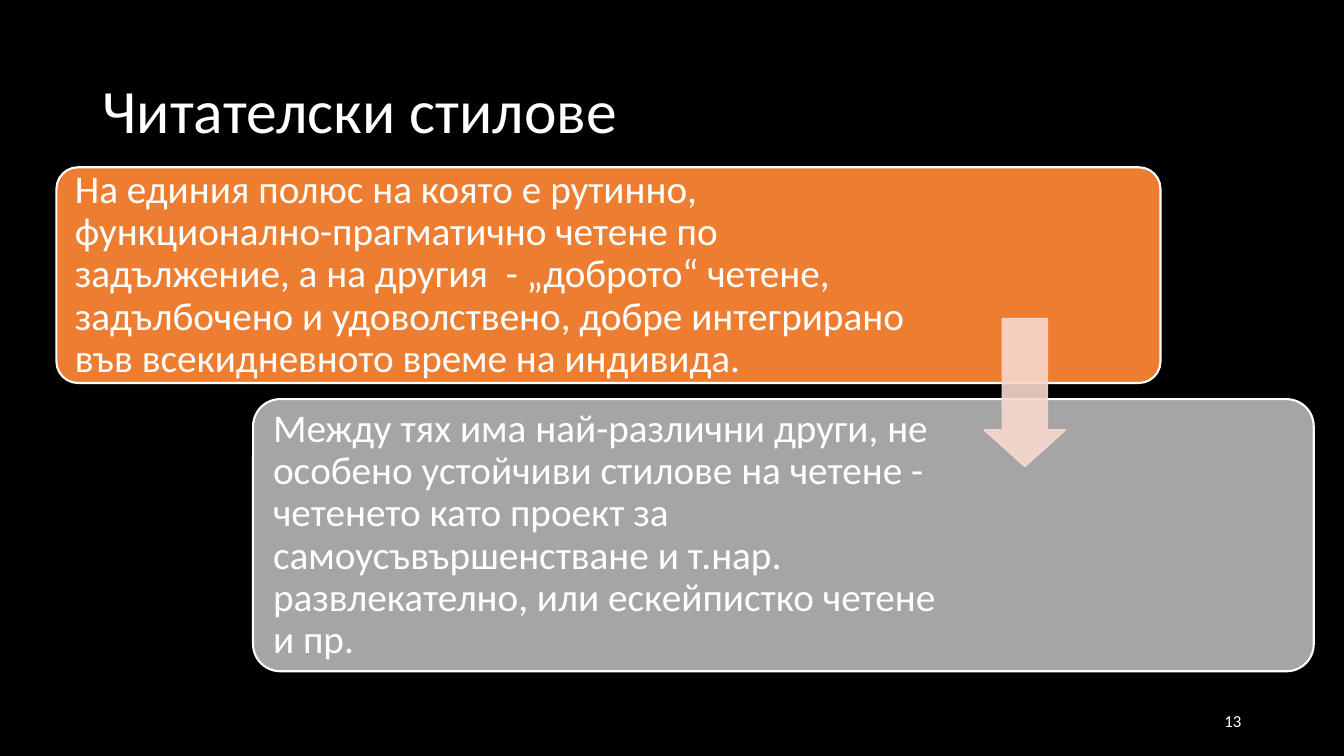
from lxml.etree import SubElement
from pptx import Presentation
from pptx.dml.color import RGBColor
from pptx.enum.shapes import MSO_SHAPE
from pptx.enum.text import MSO_ANCHOR, PP_ALIGN
from pptx.oxml.ns import qn
from pptx.util import Inches, Pt

FONT = "Calibri"
WHITE, BLACK, ORANGE, GRAY, PINK = "FFFFFF", "000000", "ED7D31", "A5A5A5", "F8D7CE"
WIDTH, HEIGHT = 13.33, 7.5
MARGIN = 0.92
TEXT_INSET = 0.12

POLES = (
    "На единия полюс на която е рутинно, функционално-прагматично четене по "
    "задължение, а на другия  - „доброто“ четене, задълбочено и удоволствено, "
    "добре интегрирано във всекидневното време на индивида."
)
BETWEEN = (
    "Между тях има най-различни други, не особено устойчиви стилове на четене - "
    "четенето като проект за самоусъвършенстване и т.нар. развлекателно, или "
    "ескейпистко четене и пр."
)


def rgb(color):
    return RGBColor.from_string(color)


def write(tf, text, size, align=PP_ALIGN.LEFT, spacing=0.9):
    tf.word_wrap = True
    tf.vertical_anchor = MSO_ANCHOR.MIDDLE
    tf.text = text
    p = tf.paragraphs[0]
    p.alignment = align
    p.line_spacing = spacing
    font = p.runs[0].font
    font.name, font.size = FONT, Pt(size)
    font.color.rgb = rgb(WHITE)


def add_label(s, box, text, size, **layout):
    write(s.shapes.add_textbox(*map(Inches, box)).text_frame, text, size, **layout)


def add_preset(s, kind, box, adjustments, fill, line, line_width):
    sp = s.shapes.add_shape(kind, *map(Inches, box))
    sp.shadow.inherit = False
    for i, value in enumerate(adjustments):
        sp.adjustments[i] = value
    sp.fill.solid()
    sp.fill.fore_color.rgb = rgb(fill)
    sp.line.color.rgb = rgb(line)
    sp.line.width = Pt(line_width)
    return sp


def add_card(s, box, fill, text, free_right):
    """Rounded card whose text leaves free_right inches empty on the right."""
    sp = add_preset(s, MSO_SHAPE.ROUNDED_RECTANGLE, box, [0.1], fill, WHITE, 1.5)
    tf = sp.text_frame
    tf.margin_left = tf.margin_top = tf.margin_bottom = Inches(TEXT_INSET)
    tf.margin_right = Inches(free_right)
    write(tf, text, 28)


def add_arrow(s, box, opacity):
    sp = add_preset(s, MSO_SHAPE.DOWN_ARROW, box, [0.55, 0.45], PINK, PINK, 1)
    for color in sp._element.spPr.iter(qn("a:srgbClr")):
        SubElement(color, qn("a:alpha")).set("val", str(opacity * 1000))


def main():
    prs = Presentation()
    prs.slide_width, prs.slide_height = Inches(WIDTH), Inches(HEIGHT)
    s = prs.slides.add_slide(prs.slide_layouts[6])
    s.background.fill.solid()
    s.background.fill.fore_color.rgb = rgb(BLACK)

    add_label(s, (MARGIN, 0.4, WIDTH - 2 * MARGIN, 1.45), "Читателски стилове", 44)
    add_card(s, (0.56, 1.66, 10.95, 2.14), ORANGE, POLES, 2.45)
    add_card(s, (2.51, 3.96, 10.52, 2.7), GRAY, BETWEEN, 3.48)
    add_arrow(s, (9.76, 3.16, 0.81, 1.47), 90)
    add_label(s, (WIDTH - MARGIN - 3, 6.95, 3, 0.4), "13", 12,
              align=PP_ALIGN.RIGHT, spacing=1.0)
    prs.save("out.pptx")


if __name__ == "__main__":
    main()
